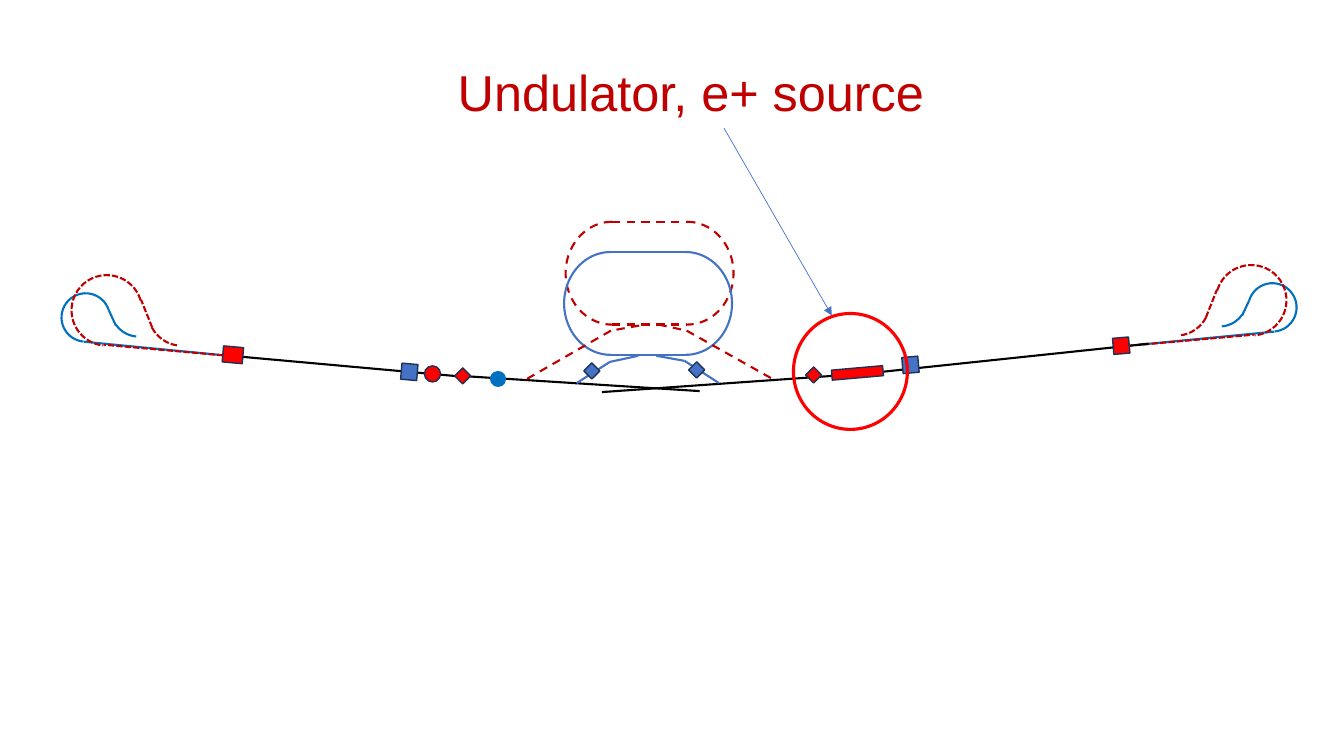
from dataclasses import dataclass
from itertools import pairwise

from lxml import etree
from pptx import Presentation
from pptx.dml.color import RGBColor
from pptx.enum.dml import MSO_LINE
from pptx.enum.shapes import MSO_CONNECTOR, MSO_SHAPE
from pptx.enum.text import MSO_AUTO_SIZE
from pptx.oxml.ns import qn
from pptx.util import Inches, Pt

ARC, RECT = MSO_SHAPE.ARC, MSO_SHAPE.RECTANGLE
OVAL, DIAMOND = MSO_SHAPE.OVAL, MSO_SHAPE.DIAMOND
STRAIGHT = MSO_CONNECTOR.STRAIGHT
DASH, SHORT_DASH = MSO_LINE.DASH, MSO_LINE.SQUARE_DOT
FIT_SHAPE = MSO_AUTO_SIZE.SHAPE_TO_FIT_TEXT

CELL = 0.1  # one grid column or row, in inches
MIRROR = 134.7  # left column + right column of mirrored turnarounds
LEFT_DROP = 1  # the left turnaround sits one row lower


@dataclass(frozen=True)
class Theme:
    font: str = "Arial"
    title_size: float = 36
    beam: str = "000000"
    electron: str = "4472C4"
    electron_turn: str = "0070C0"
    positron: str = "C00000"
    accent: str = "FF0000"
    outline: str = "1E3256"
    beam_width: float = 1.5
    device_width: float = 1
    ring_width: float = 2.25
    arrow_width: float = 0.5


T = Theme()


@dataclass(frozen=True)
class Stroke:
    color: str
    width: float = T.beam_width
    dash: MSO_LINE | None = None


@dataclass(frozen=True)
class Box:
    col: float
    row: float
    cols: float = 1.6
    rows: float = 1.6


@dataclass(frozen=True)
class Track:
    points: tuple[tuple[float, float], ...]
    stroke: Stroke


@dataclass(frozen=True)
class Device:
    kind: MSO_SHAPE
    box: Box
    fill: str | None
    stroke: Stroke | None = Stroke(T.outline, T.device_width)
    rotation: float = 0
    flip: bool = False


@dataclass(frozen=True)
class Turnaround:
    """Right-hand loop: large arc, return arc, and two straights."""
    loop: Box
    bend: Box
    straights: tuple[tuple[tuple[float, float], ...], ...]
    stroke: Stroke


BEAM = Stroke(T.beam)
ELECTRON = Stroke(T.electron)
POSITRON = Stroke(T.positron, dash=DASH)

LOOP_ANGLES, BEND_ANGLES, HALF_ANGLES = (121.04, 53.57), (19.67, 53.57), (107.94, 0)

TURNAROUNDS = [
    Turnaround(Box(123.8, 28.1, 4.8, 4.8), Box(118.3, 27.6, 5.3, 4.8),
               (((123.2, 31.3), (123.9, 29.8)), ((113, 34.2), (126.4, 32.9))),
               Stroke(T.electron_turn)),
    Turnaround(Box(120.6, 26.3, 7, 7), Box(113.3, 26.6, 6.7, 6.7),
               (((119.6, 31.5), (120.7, 28.75)), ((110.9, 34.4), (124.4, 33.2))),
               Stroke(T.positron, dash=SHORT_DASH)),
]

RINGS = [(60.7, 22, POSITRON), (60.55, 25, ELECTRON)]

TRACKS = [
    Track(((45.8, 37.3), (69.4, 38.8)), BEAM),
    Track(((59.7, 38.9), (83.9, 37.2)), BEAM),
    Track(((65.3, 32.2), (68.1, 32.8), (76.8, 37.7)), POSITRON),
    Track(((63.4, 32.3), (60.6, 32.8), (51.9, 37.8)), POSITRON),
    Track(((63.3, 35.3), (60.5, 35.9), (57.2, 38)), ELECTRON),
    Track(((65.1, 35.3), (67.9, 35.8), (71.3, 38)), ELECTRON),
    Track(((86.4, 37), (113.9, 34.1)), BEAM),
    Track(((46.2, 37.4), (24, 35.4)), BEAM),
]

DEVICES = [
    Device(RECT, Box(39.8, 36.1), T.electron, rotation=5),
    Device(RECT, Box(22.1, 34.4, 2), T.accent, rotation=5),
    Device(RECT, Box(89.5, 35.4), T.electron, rotation=355, flip=True),
    Device(RECT, Box(110.4, 33.5), T.accent, rotation=355, flip=True),
    Device(OVAL, Box(48.6, 36.8), T.electron_turn, stroke=None),
    Device(OVAL, Box(42.1, 36.3), T.accent),
    Device(RECT, Box(82.5, 36.5, 5.1, 1), T.accent, rotation=355),
    Device(DIAMOND, Box(57.9, 36), T.electron),
    Device(DIAMOND, Box(68.3, 35.9), T.electron),
    Device(DIAMOND, Box(45.1, 36.5), T.accent),
    Device(DIAMOND, Box(79.9, 36.4), T.accent),
    Device(OVAL, Box(78.7, 31.1, 11.3, 11.5), None, Stroke(T.accent, T.ring_width)),
]


def grid(*cells: float) -> list[int]:
    return [Inches(n * CELL) for n in cells]


def apply_stroke(line, stroke: Stroke) -> None:
    line.color.rgb = RGBColor.from_string(stroke.color)
    line.width = Pt(stroke.width)
    if stroke.dash is not None:
        line.dash_style = stroke.dash


def draw_device(s, device: Device):
    box = device.box
    sp = s.shapes.add_shape(device.kind, *grid(box.col, box.row, box.cols, box.rows))
    sp.shadow.inherit = False
    sp.rotation = device.rotation
    if device.flip:
        sp._element.spPr.xfrm.set("flipH", "1")
    if device.fill:
        sp.fill.solid()
        sp.fill.fore_color.rgb = RGBColor.from_string(device.fill)
    else:
        sp.fill.background()
    if device.stroke:
        apply_stroke(sp.line, device.stroke)
    else:
        sp.line.fill.background()
    return sp


def draw_arc(s, box: Box, angles: tuple[float, float], stroke: Stroke,
             rotation: float, flip: bool) -> None:
    sp = draw_device(s, Device(ARC, box, None, stroke, rotation, flip))
    sp.adjustments[0], sp.adjustments[1] = angles


def draw_track(s, track: Track) -> list:
    """Draw one connector for each pair of neighbouring points."""
    connectors = []
    for start, end in pairwise(track.points):
        cx = s.shapes.add_connector(STRAIGHT, *grid(*start, *end))
        apply_stroke(cx.line, track.stroke)
        etree.SubElement(cx._element.spPr, qn("a:effectLst"))
        connectors.append(cx)
    return connectors


def draw_turnaround(s, turn: Turnaround, left: bool) -> None:
    """Draw the loop on the right, or mirrored on the left."""
    for box, angles in ((turn.loop, LOOP_ANGLES), (turn.bend, BEND_ANGLES)):
        if left:
            box = Box(MIRROR - box.col - box.cols, box.row + LEFT_DROP, box.cols, box.rows)
        draw_arc(s, box, angles, turn.stroke, 5 if left else 355, left)
    for points in turn.straights:
        if left:
            points = tuple((MIRROR - x, y + LEFT_DROP) for x, y in points)
        draw_track(s, Track(points, turn.stroke))


def draw_ring(s, col: float, row: float, stroke: Stroke) -> None:
    """Draw a damping ring: two half circles joined by two straights."""
    length, height, depth = 7.45, 10.2, 9.2
    top = row + (height - depth) / 2
    for center, rotation, flip in ((col + length, 90, False), (col, 270, True)):
        box = Box(center - height / 2, top, height, depth)
        draw_arc(s, box, HALF_ANGLES, stroke, rotation, flip)
    for y in (row, row + height):
        draw_track(s, Track(((col, y), (col + length, y)), stroke))


def draw_label(s) -> None:
    tf = s.shapes.add_textbox(*grid(44.4, 5.6, 54.9, 7.1)).text_frame
    tf.word_wrap = True
    tf.auto_size = FIT_SHAPE
    tf.text = "Undulator, e+ source"
    font = tf.paragraphs[0].runs[0].font
    font.name, font.size = T.font, Pt(T.title_size)
    font.color.rgb = RGBColor.from_string(T.positron)
    pointer = Track(((71.8, 12.7), (82.5, 31.3)), Stroke(T.electron, T.arrow_width))
    for cx in draw_track(s, pointer):
        etree.SubElement(cx.line._get_or_add_ln(), qn("a:tailEnd"), type="triangle")


def main() -> None:
    prs = Presentation()
    prs.slide_width, prs.slide_height = Inches(13.33), Inches(7.5)
    s = prs.slides.add_slide(prs.slide_layouts[6])
    for left in (False, True):
        for turn in TURNAROUNDS:
            draw_turnaround(s, turn, left)
    for ring in RINGS:
        draw_ring(s, *ring)
    for track in TRACKS:
        draw_track(s, track)
    for device in DEVICES:
        draw_device(s, device)
    draw_label(s)
    prs.save("out.pptx")


if __name__ == "__main__":
    main()
